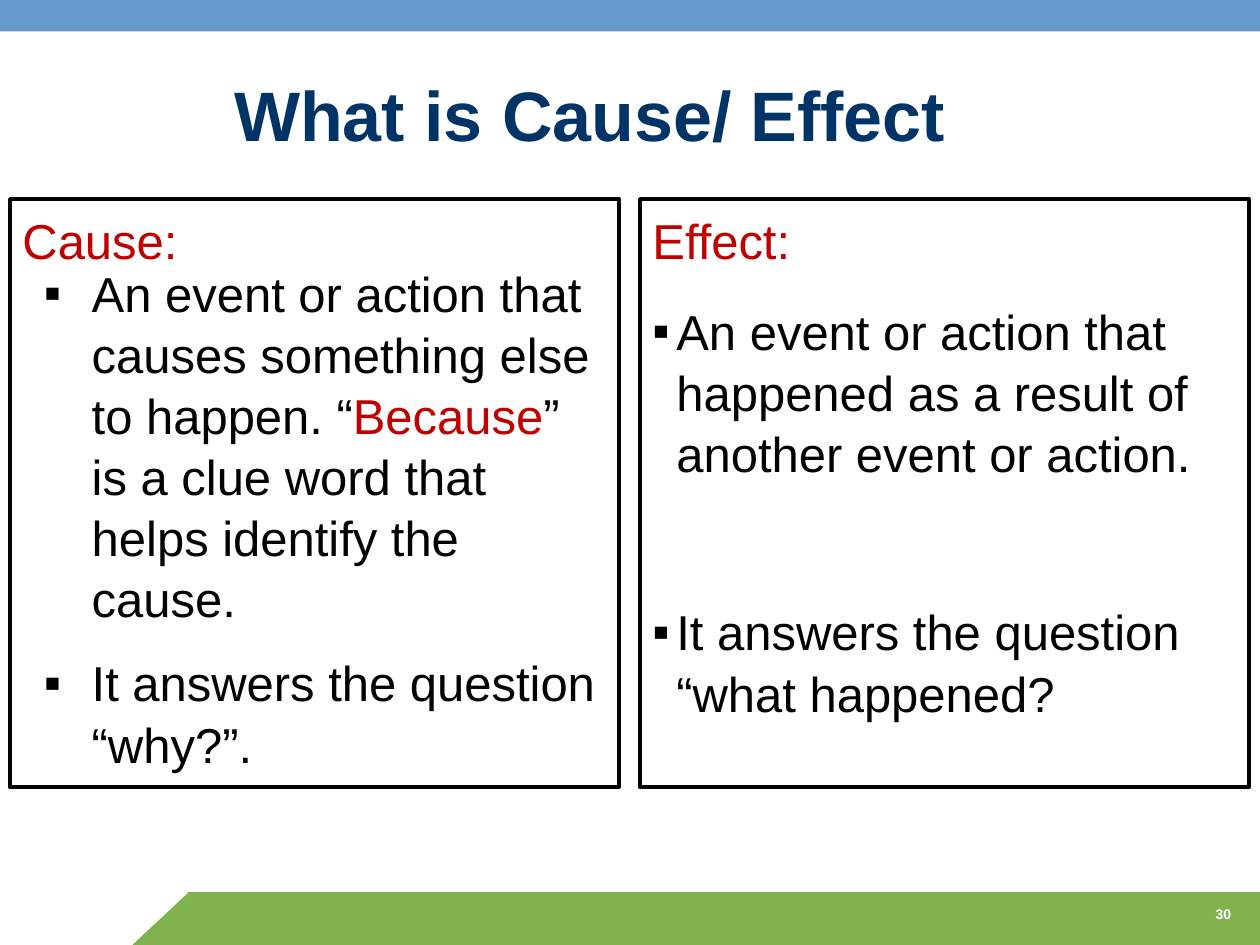
"""Build the cause and effect comparison slide."""
from dataclasses import dataclass

from lxml import etree
from pptx import Presentation
from pptx.dml.color import RGBColor
from pptx.enum.shapes import MSO_SHAPE
from pptx.enum.text import MSO_ANCHOR, PP_ALIGN
from pptx.oxml.ns import qn
from pptx.util import Inches, Pt

RECT, TRIANGLE = MSO_SHAPE.RECTANGLE, MSO_SHAPE.RIGHT_TRIANGLE
LEFT, CENTER, RIGHT = PP_ALIGN.LEFT, PP_ALIGN.CENTER, PP_ALIGN.RIGHT
TOP, BOTTOM = MSO_ANCHOR.TOP, MSO_ANCHOR.BOTTOM
FONT = "Arial"
INK, RED, NAVY, WHITE = "020202", "C00000", "003366", "FFFFFF"
GREEN, BLUE = "80B34D", "6699CC"
BODY_SIZE = 28
BODY_SPACING = 1.04


@dataclass
class Box:
    left: float
    top: float
    width: float
    height: float

    def emu(self):
        return [Inches(v) for v in (self.left, self.top, self.width, self.height)]


@dataclass
class Bullet:
    runs: list[tuple[str, str]]
    indent: float
    before: float = 0


@dataclass
class Band:
    kind: int
    box: Box
    color: str
    flip: bool = False


BANDS = [
    Band(RECT, Box(1.49, 7.08, 8.51, 0.42), GREEN),
    Band(TRIANGLE, Box(1.05, 7.08, 0.45, 0.42), GREEN, flip=True),
    Band(RECT, Box(0, 0, 10, 0.25), BLUE),
]
CAUSE = [
    Bullet([("An event or action that causes something else to happen. “", INK),
            ("Because", RED),
            ("” is a clue word that helps identify the cause.", INK)], 0.38),
    Bullet([("It answers the question “why?”.", INK)], 0.38, 13),
]
EFFECT = [
    Bullet([("An event or action that happened as a result of another event or action.", INK)],
           0.19, 17),
    Bullet([("It answers the question “what happened?", INK)], 0.19, 67),
]


def rgb(color: str) -> RGBColor:
    return RGBColor.from_string(color)


def style(r, size: float, color: str, bold: bool = False) -> None:
    r.font.name = FONT
    r.font.size = Pt(size)
    r.font.bold = bold
    r.font.color.rgb = rgb(color)


def add_band(s, band: Band) -> None:
    sp = s.shapes.add_shape(band.kind, *band.box.emu())
    sp.shadow.inherit = False
    sp.fill.solid()
    sp.fill.fore_color.rgb = rgb(band.color)
    sp.line.fill.background()
    if band.flip:
        sp._element.spPr.xfrm.set("flipH", "1")


def add_panel(s, box: Box, heading: str):
    sp = s.shapes.add_shape(RECT, *box.emu())
    sp.shadow.inherit = False
    sp.fill.background()
    sp.line.color.rgb = rgb(INK)
    sp.line.width = Pt(2.25)
    tf = sp.text_frame
    tf.word_wrap = True
    tf.vertical_anchor = TOP
    tf.margin_top = Inches(0.07)
    p = tf.paragraphs[0]
    p.text = heading
    p.alignment = LEFT
    p.line_spacing = BODY_SPACING
    style(p.runs[0], BODY_SIZE, RED)
    return tf


def add_text(s, box: Box, text: str, align, anchor, size: float, color: str) -> None:
    tf = s.shapes.add_textbox(*box.emu()).text_frame
    tf.word_wrap = True
    tf.vertical_anchor = anchor
    p = tf.paragraphs[0]
    p.text = text
    p.alignment = align
    style(p.runs[0], size, color, bold=True)


def write_bullet(p, bullet: Bullet) -> None:
    p.alignment = LEFT
    p.line_spacing = BODY_SPACING
    p.space_before = Pt(bullet.before)
    pPr = p._p.get_or_add_pPr()
    pPr.set("marL", str(Inches(bullet.indent)))
    pPr.set("indent", str(-Inches(bullet.indent)))
    etree.SubElement(pPr, qn("a:buFont")).set("typeface", FONT)
    etree.SubElement(pPr, qn("a:buChar")).set("char", "▪")
    for text, color in bullet.runs:
        r = p.add_run()
        r.text = text
        style(r, BODY_SIZE, color)


def main() -> None:
    prs = Presentation()
    prs.slide_width, prs.slide_height = Inches(10), Inches(7.5)
    s = prs.slides.add_slide(prs.slide_layouts[6])
    for band in BANDS:
        add_band(s, band)

    add_panel(s, Box(0.08, 1.58, 4.83, 4.67), "Cause:")
    effect = add_panel(s, Box(5.08, 1.58, 4.83, 4.67), "Effect:")
    for bullet in EFFECT:
        write_bullet(effect.add_paragraph(), bullet)

    add_text(s, Box(8.58, 7.14, 1.29, 0.25), "30", RIGHT, TOP, 8, WHITE)

    cause = s.shapes.add_textbox(*Box(0.25, 2, 4.67, 4.06).emu()).text_frame
    cause.word_wrap = True
    cause.margin_top = Inches(0.07)
    for i, bullet in enumerate(CAUSE):
        write_bullet(cause.add_paragraph() if i else cause.paragraphs[0], bullet)

    add_text(s, Box(0.43, 0.61, 8.5, 0.67), "What is Cause/ Effect", CENTER, BOTTOM, 40, NAVY)
    prs.save("out.pptx")


if __name__ == "__main__":
    main()
